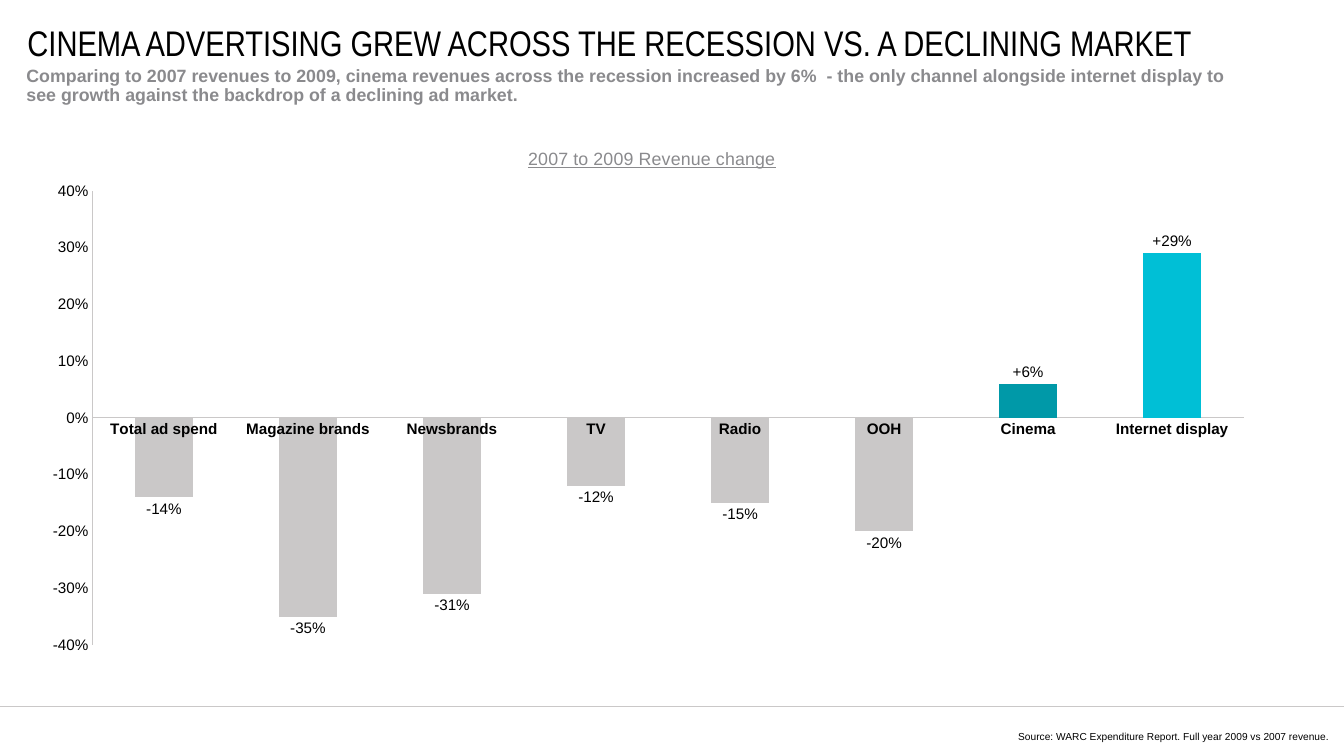
from lxml import etree
from pptx import Presentation
from pptx.chart.data import CategoryChartData
from pptx.dml.color import RGBColor
from pptx.enum.chart import XL_CHART_TYPE, XL_LABEL_POSITION, XL_TICK_MARK
from pptx.enum.shapes import MSO_CONNECTOR
from pptx.enum.text import MSO_ANCHOR, PP_ALIGN
from pptx.oxml.ns import qn
from pptx.util import Inches, Pt

COLUMNS = XL_CHART_TYPE.COLUMN_CLUSTERED
OUTSIDE_END = XL_LABEL_POSITION.OUTSIDE_END
NO_TICK = XL_TICK_MARK.NONE
STRAIGHT = MSO_CONNECTOR.STRAIGHT
TOP, MIDDLE = MSO_ANCHOR.TOP, MSO_ANCHOR.MIDDLE
LEFT, RIGHT = PP_ALIGN.LEFT, PP_ALIGN.RIGHT

BLACK, MID_GREY, LIGHT_GREY = "000000", "8A8A8D", "CAC8C8"
TEAL, CYAN = "0099A8", "00BFD6"

REVENUE_CHANGE = {
    "Total ad spend": -0.14,
    "Magazine brands": -0.35,
    "Newsbrands": -0.31,
    "TV": -0.12,
    "Radio": -0.15,
    "OOH": -0.2,
    "Cinema": 0.06,
    "Internet display": 0.29,
}
HIGHLIGHTS = {"Cinema": TEAL, "Internet display": CYAN}


def colour(hex_text):
    return RGBColor.from_string(hex_text)


def style_font(font, size, hex_text=BLACK, **formats):
    font.color.rgb = colour(hex_text)
    values = {"name": "Arial", "size": Pt(size), "bold": False, **formats}
    for name, value in values.items():
        setattr(font, name, value)


def style_line(line, width):
    line.color.rgb = colour(LIGHT_GREY)
    line.width = Pt(width)


def add_text(page, place, text, size, hex_text=BLACK, frame_formats=None,
             align=LEFT, spacing=None, **formats):
    box = page.shapes.add_textbox(*map(Inches, place))
    frame = box.text_frame
    for name, value in {"word_wrap": True, **(frame_formats or {})}.items():
        setattr(frame, name, value)
    para = frame.paragraphs[0]
    para.alignment = align
    if spacing:
        para.line_spacing = Pt(spacing)
    span = para.add_run()
    span.text = text
    style_font(span.font, size, hex_text, **formats)


def add_rule(page, y, length):
    rule = page.shapes.add_connector(
        STRAIGHT, 0, Inches(y), Inches(length), Inches(y))
    style_line(rule.line, 0.5)
    etree.SubElement(rule._element.spPr, qn("a:effectLst"))


def manual_layout(parent, position, **fractions):
    """Fix a chart part at fractions of the chart size."""
    for old in parent.findall(qn("c:layout")):
        parent.remove(old)
    layout = etree.Element(qn("c:layout"))
    manual = etree.SubElement(layout, qn("c:manualLayout"))
    if "w" in fractions:
        etree.SubElement(manual, qn("c:layoutTarget"), val="inner")
    for mode in ("xMode", "yMode"):
        etree.SubElement(manual, qn(f"c:{mode}"), val="edge")
    for name, value in fractions.items():
        etree.SubElement(manual, qn(f"c:{name}"), val=str(value))
    parent.insert(position, layout)


def style_axis(axis, bold):
    axis.has_major_gridlines = False
    axis.major_tick_mark = NO_TICK
    axis.minor_tick_mark = NO_TICK
    style_line(axis.format.line, 0.75)
    style_font(axis.tick_labels.font, 12, bold=bold)


def add_chart_title(chart, text):
    chart.has_title = True
    title = chart.chart_title
    title.include_in_layout = False
    span = title.text_frame.paragraphs[0].add_run()
    span.text = text
    style_font(span.font, 14, MID_GREY, underline=True)
    manual_layout(title._element, 1, x=0.4, y=0.03)


def add_revenue_chart(page, place):
    data = CategoryChartData(number_format="0%")
    data.categories = list(REVENUE_CHANGE)
    data.add_series("Series 1", list(REVENUE_CHANGE.values()))
    chart = page.shapes.add_chart(COLUMNS, *map(Inches, place), data).chart
    chart.has_legend = False
    style_font(chart.font, 10)
    add_chart_title(chart, "2007 to 2009 Revenue change")

    # Axes
    style_axis(chart.category_axis, bold=True)
    scale = chart.value_axis
    style_axis(scale, bold=False)
    for name, value in {"minimum_scale": -0.4, "maximum_scale": 0.4,
                        "major_unit": 0.1}.items():
        setattr(scale, name, value)
    scale.tick_labels.number_format = "0%"
    scale.tick_labels.number_format_is_linked = False

    # Columns, with the growing channels highlighted
    plot = chart.plots[0]
    plot.gap_width = 150
    plot.vary_by_categories = False
    series = plot.series[0]
    series.invert_if_negative = False
    series.format.fill.solid()
    series.format.fill.fore_color.rgb = colour(LIGHT_GREY)
    for index, channel in enumerate(REVENUE_CHANGE):
        if channel in HIGHLIGHTS:
            fill = series.points[index].format.fill
            fill.solid()
            fill.fore_color.rgb = colour(HIGHLIGHTS[channel])

    # Value labels, with a plus sign for growth
    labels = series.data_labels
    for name, value in {"show_value": True, "position": OUTSIDE_END,
                        "number_format": "+0%;-0%",
                        "number_format_is_linked": False}.items():
        setattr(labels, name, value)
    style_font(labels.font, 12)

    plot_area = chart._chartSpace.chart.plotArea
    manual_layout(plot_area, 0, x=0.0513, y=0.1175, w=0.928, h=0.846)


def main():
    deck = Presentation()
    deck.slide_width, deck.slide_height = Inches(14.7), Inches(8.27)
    page = deck.slides.add_slide(deck.slide_layouts[6])
    no_margins = dict.fromkeys(
        ("margin_left", "margin_top", "margin_right", "margin_bottom"), 0)
    centred = {**no_margins, "vertical_anchor": MIDDLE}

    # Heading
    add_text(page, (0.3, 0.3, 13.58, 0.32),
             "CINEMA ADVERTISING GREW ACROSS THE RECESSION VS. "
             "A DECLINING MARKET",
             28, frame_formats={**centred, "word_wrap": False},
             name="Arial Narrow")
    add_text(page, (0.19, 0.68, 13.59, 0.48),
             "Comparing to 2007 revenues to 2009, cinema revenues across the "
             "recession increased by 6%  - the only channel alongside "
             "internet display to see growth against the backdrop of a "
             "declining ad market.",
             14, MID_GREY, {"vertical_anchor": TOP}, spacing=15, bold=True)

    # Chart
    add_revenue_chart(page, (0.31, 1.4, 13.58, 5.87))

    # Footer
    add_rule(page, 7.73, 14.7)
    add_text(page, (10.5, 7.86, 4.04, 0.27),
             "Source: WARC Expenditure Report. Full year 2009 vs 2007 "
             "revenue.",
             8, frame_formats=centred, align=RIGHT, spacing=19)

    deck.save("out.pptx")


if __name__ == "__main__":
    main()
